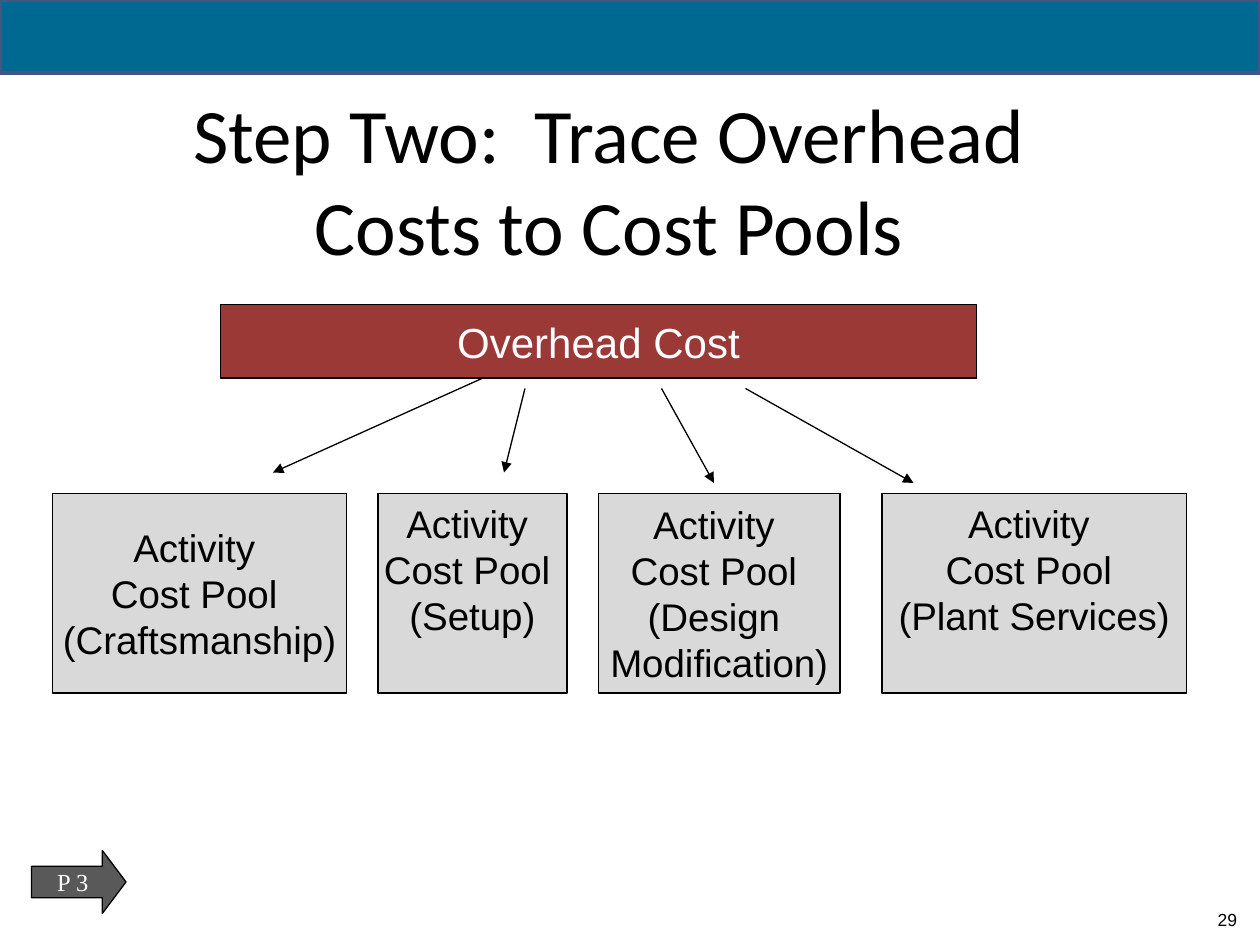
from lxml import etree
from pptx import Presentation
from pptx.dml.color import RGBColor
from pptx.enum.shapes import MSO_CONNECTOR, MSO_SHAPE
from pptx.enum.text import MSO_ANCHOR, PP_ALIGN
from pptx.oxml.ns import qn
from pptx.util import Inches, Pt

RECT, RIGHT_ARROW = MSO_SHAPE.RECTANGLE, MSO_SHAPE.RIGHT_ARROW
STRAIGHT = MSO_CONNECTOR.STRAIGHT
TOP, MIDDLE = MSO_ANCHOR.TOP, MSO_ANCHOR.MIDDLE
CENTER, RIGHT = PP_ALIGN.CENTER, PP_ALIGN.RIGHT

BLACK = RGBColor(0x00, 0x00, 0x00)
WHITE = RGBColor(0xFF, 0xFF, 0xFF)
TEAL = RGBColor(0x00, 0x69, 0x91)
INDIGO = RGBColor(0x44, 0x55, 0x83)
BRICK = RGBColor(0x9B, 0x39, 0x37)
LIGHT_GREY = RGBColor(0xD9, 0xD9, 0xD9)
DARK_GREY = RGBColor(0x59, 0x59, 0x59)

COLS, ROWS = 120, 90
UNIT = Inches(10) / COLS

POOLS = [
    (0, 28, "Activity \nCost Pool \v(Craftsmanship)", MIDDLE),
    (31, 18, "Activity \nCost Pool \v(Setup)", TOP),
    (52, 23, "Activity \nCost Pool \v(Design \vModification)", MIDDLE),
    (79, 29, "Activity \nCost Pool \v(Plant Services)", TOP),
]
ARROWS = [
    ((41, 7), (21, 16)),
    ((45, 8), (43, 16)),
    ((58, 8), (63, 17)),
    ((66, 8), (82, 17)),
]


def grid(*cells):
    """Turn grid units into slide lengths."""
    return [round(c * UNIT) for c in cells]


def write(sp, text, size, font, color, align=CENTER, anchor=MIDDLE, wrap=False):
    """Fill a shape with uniformly formatted paragraphs."""
    tf = sp.text_frame
    tf.word_wrap, tf.vertical_anchor = wrap, anchor
    tf.text = text
    for p in tf.paragraphs:
        p.alignment = align
        p.font.size, p.font.name = Pt(size), font
        p.font.color.rgb = color


def add_block(s, box, fill, kind=RECT, line=BLACK, width=0.75):
    """Add a filled and outlined preset shape."""
    sp = s.shapes.add_shape(kind, *grid(*box))
    sp.shadow.inherit = False
    sp.fill.solid()
    sp.fill.fore_color.rgb = fill
    sp.line.color.rgb, sp.line.width = line, Pt(width)
    return sp


def add_arrow(s, start, end):
    """Add a thin line with a triangle at its end."""
    cn = s.shapes.add_connector(STRAIGHT, *grid(*start, *end))
    cn.line.color.rgb, cn.line.width = BLACK, Pt(0.75)
    etree.SubElement(cn.line._get_or_add_ln(), qn("a:tailEnd"), type="triangle")
    etree.SubElement(cn._element.spPr, qn("a:effectLst"))


def add_heading(s, box):
    """Add the top band and the title below it."""
    x, y, w, h = box
    add_block(s, (x, y, w, 7), TEAL, line=INDIGO, width=2.25)
    sp = s.shapes.add_textbox(*grid(x + 11, y + 8.6, 94, h - 8.6))
    write(sp, "Step Two:  Trace Overhead Costs to Cost Pools",
          44, "Calibri", BLACK, wrap=True)


def add_diagram(s, box):
    """Add the overhead bar, the cost pools and the arrows between them."""
    x, y, w, h = box
    sp = add_block(s, (x + 16, y, 72, 7), BRICK)
    write(sp, "Overhead Cost", 24, "Arial", WHITE)
    for left, width, text, anchor in POOLS:
        sp = add_block(s, (x + left, y + 18, width, h - 18), LIGHT_GREY)
        write(sp, text, 22, "Arial", BLACK, anchor=anchor)
    for (x1, y1), (x2, y2) in ARROWS:
        add_arrow(s, (x + x1, y + y1), (x + x2, y + y2))


def add_footer(s, box):
    """Add the objective marker and the page number."""
    x, y, w, h = box
    sp = add_block(s, (x + 3, y, 9, 6), DARK_GREY, RIGHT_ARROW)
    sp.adjustments[0], sp.adjustments[1] = 0.5, 0.375
    write(sp, "P 3", 14, "Times New Roman", WHITE)
    sp = s.shapes.add_textbox(*grid(x + w - 8, y + h - 4, 7, 3))
    write(sp, "29", 10, "Arial", BLACK, RIGHT, TOP, True)


def main():
    """Build and save the slide."""
    prs = Presentation()
    prs.slide_width, prs.slide_height = grid(COLS, ROWS)
    s = prs.slides.add_slide(prs.slide_layouts[6])
    add_heading(s, (0, 0, COLS, 25.4))
    add_diagram(s, (5, 29, 108, 37))
    add_footer(s, (0, 81, COLS, 9))
    prs.save("out.pptx")


if __name__ == "__main__":
    main()
